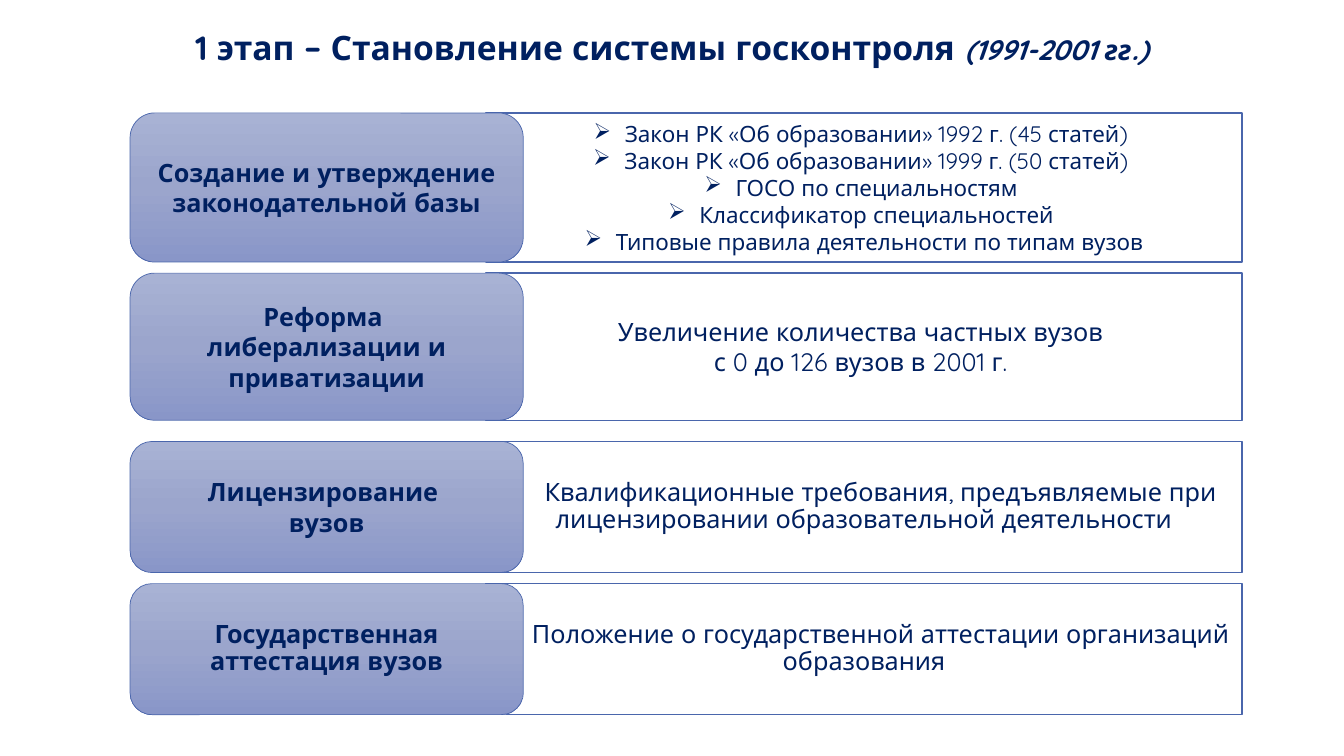
from copy import deepcopy

from lxml.etree import SubElement
from pptx import Presentation
from pptx.dml.color import RGBColor
from pptx.enum.shapes import MSO_SHAPE as SHAPE
from pptx.enum.text import MSO_ANCHOR as ANCHOR, PP_ALIGN as ALIGN
from pptx.oxml.ns import qn
from pptx.util import Inches, Pt

NAVY = RGBColor(0x00, 0x20, 0x60)
BLUE = RGBColor(0x4A, 0x66, 0xAC)
WHITE = RGBColor(0xFF, 0xFF, 0xFF)
GRADIENT = [
    (0, RGBColor(0xA8, 0xB2, 0xD4)),
    (0.5, RGBColor(0x9B, 0xA5, 0xCC)),
    (1, RGBColor(0x89, 0x96, 0xC8)),
]

# Each stage: top, height, label and its format, detail and its format
STAGES = [
    (1.12, 1.48, ["Создание и утверждение законодательной базы"], {},
     ["Закон РК «Об образовании» 1992 г. (45 статей) ",
      "Закон РК «Об образовании» 1999 г. (50 статей) ",
      "ГОСО по специальностям ",
      "Классификатор специальностей ",
      "Типовые правила деятельности по типам вузов"],
     dict(size=16, bullet="➢", left=0.31, indent=-0.31)),
    (2.71, 1.46, ["Реформа ", "либерализации и приватизации"], {},
     ["Увеличение количества частных вузов ", "с 0 до 126 вузов в 2001 г. "], {}),
    (4.38, 1.3, ["Лицензирование ", "вузов"], {},
     ["Квалификационные требования, предъявляемые при "
      "лицензировании образовательной деятельности"],
     dict(spacing=0.9, indent=0.33)),
    (5.79, 1.3, ["Государственная аттестация вузов"], dict(spacing=0.9),
     ["Положение о государственной аттестации организаций образования"],
     dict(spacing=0.9, indent=0.33)),
]


def add_run(p, text, size=18, bold=False, italic=False, font="Quicksand", color=NAVY):
    r = p.add_run()
    r.text = text
    r.font.name = font
    r.font.size = Pt(size)
    r.font.bold = bold
    r.font.italic = italic
    r.font.color.rgb = color


class StageSlide:
    def __init__(self, prs):
        self.slide = prs.slides.add_slide(prs.slide_layouts[6])

    def title(self, text, years):
        s = self.slide.shapes.add_textbox(
            Inches(0.83), Inches(0.22), Inches(11.67), Inches(0.5))
        s.text_frame.word_wrap = True
        p = s.text_frame.paragraphs[0]
        p.alignment = ALIGN.CENTER
        add_run(p, text, size=24, bold=True)
        add_run(p, years, size=20, bold=True, italic=True)

    def box(self, kind, left, top, width, height, line):
        s = self.slide.shapes.add_shape(
            kind, Inches(left), Inches(top), Inches(width), Inches(height))
        s.shadow.inherit = False
        s.line.color.rgb = BLUE
        s.line.width = Pt(line)
        return s

    def detail(self, top, height, lines, **style):
        s = self.box(SHAPE.RECTANGLE, 4.82, top, 7.5, height, line=1)
        s.fill.solid()
        s.fill.fore_color.rgb = WHITE
        self.paragraphs(s, lines, **style)

    def label(self, top, height, lines, **style):
        s = self.box(SHAPE.ROUNDED_RECTANGLE, 1.29, top, 3.9, height, line=0.5)
        s.fill.gradient()
        s.fill.gradient_angle = 270
        # The default gradient has two stops; add the third
        stops = s._element.spPr.find(".//" + qn("a:gsLst"))
        stops.append(deepcopy(stops[0]))
        for stop, (position, color) in zip(s.fill.gradient_stops, GRADIENT):
            stop.position = position
            stop.color.rgb = color
        self.paragraphs(s, lines, bold=True, **style)

    def paragraphs(self, s, lines, spacing=None, bullet=None, left=0, indent=0, **font):
        tf = s.text_frame
        tf.word_wrap = True
        tf.vertical_anchor = ANCHOR.MIDDLE
        for i, text in enumerate(lines):
            p = tf.add_paragraph() if i else tf.paragraphs[0]
            p.alignment = ALIGN.CENTER
            p.line_spacing = spacing
            pPr = p._p.get_or_add_pPr()
            pPr.set("marL", str(Inches(left)))
            pPr.set("indent", str(Inches(indent)))
            if bullet:
                SubElement(pPr, qn("a:buChar")).set("char", bullet)
            add_run(p, text, **font)


def main():
    prs = Presentation()
    prs.slide_width, prs.slide_height = Inches(13.33), Inches(7.5)
    page = StageSlide(prs)

    # Heading
    page.title("1 этап – Становление системы госконтроля ", "(1991-2001 гг.)")

    # Stage rows: the label overlaps the left edge of its detail box
    for top, height, label, label_style, detail, detail_style in STAGES:
        page.detail(top, height, detail, **detail_style)
        page.label(top, height, label, **label_style)

    prs.save("out.pptx")


if __name__ == "__main__":
    main()
